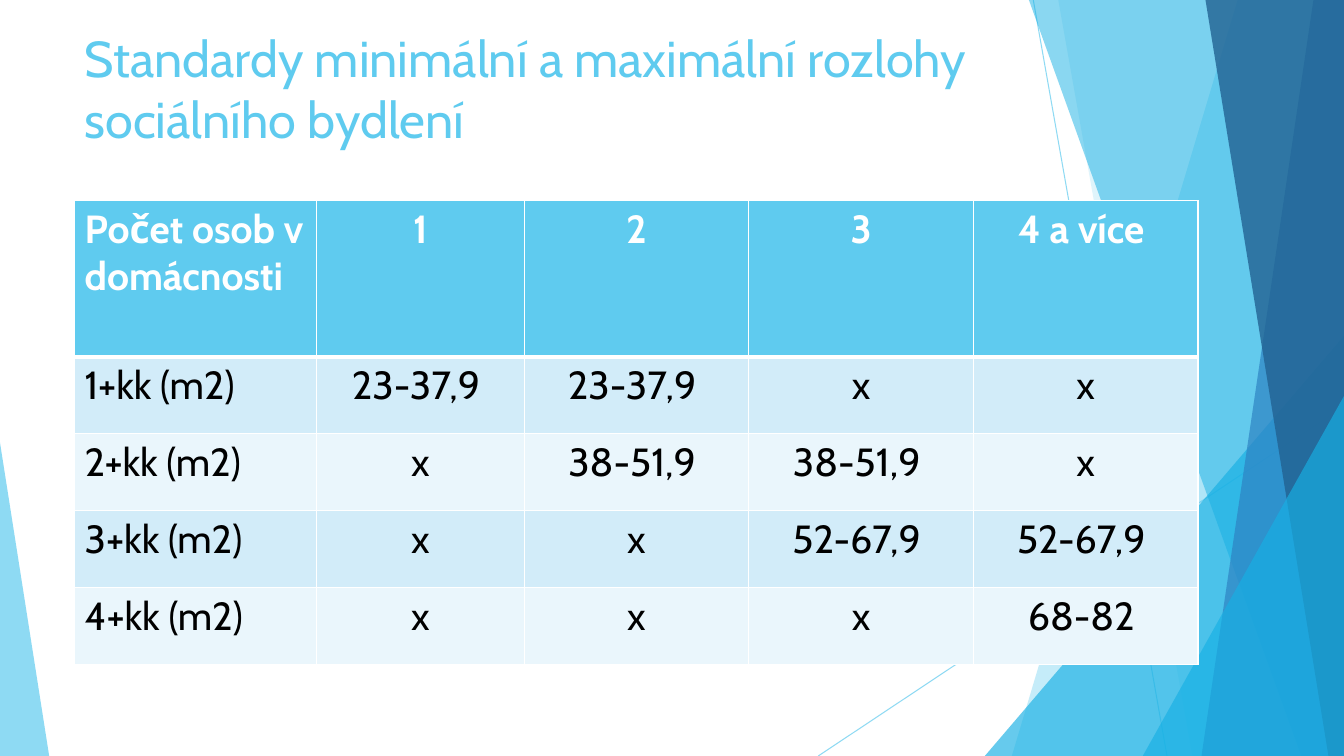
import pptx
import pptx.dml.color
import pptx.enum.shapes
import pptx.enum.text
import pptx.oxml
import pptx.oxml.ns
import pptx.util
import lxml.etree

Cm = pptx.util.Cm
Pt = pptx.util.Pt

# Content
TITLE = "Standardy minimální a maximální rozlohy sociálního bydlení"
ROWS = [
    ["Počet osob v domácnosti", "1", "2", "3", "4 a více "],
    ["1+kk (m2)", "23-37,9 ", "23-37,9 ", "x", "x"],
    ["2+kk (m2)", "x", "38-51,9 ", "38-51,9 ", "x"],
    ["3+kk (m2)", "x", "x", "52-67,9 ", "52-67,9 "],
    ["4+kk (m2)", "x", "x", "x", "68-82 "],
]

# Look, lengths in centimetres
FONT = "Cabin"
COLORS = {
    "sky": "5FCBEF", "cyan": "17B0E4", "blue": "2E83C3", "navy": "226292",
    "white": "FFFFFF", "black": "000000", "band_dark": "D2ECF9", "band_light": "EAF6FC",
}
SLIDE_WIDTH, SLIDE_HEIGHT = 33.87, 19.05
TITLE_BOX = (1.88, 0.56, 23.88, 3.76)
TABLE_LEFT, TABLE_TOP = 1.88, 5.05
COLUMN_WIDTHS = [6.1, 5.23] + [5.66] * 3
ROW_HEIGHTS = [3.94] + [1.94] * 4
THIN_BORDER, HEADER_BORDER = 1, 3

# Thin rays: start x, start y, end x, end y
RAYS = [(26.04, 0, 29.41, SLIDE_HEIGHT), (SLIDE_WIDTH, 10.24, 20.62, SLIDE_HEIGHT)]
# Facets, back to front. A band reaches the right edge: top x, bottom x.
# A triangle stands on the bottom edge: left, top, width, apex position.
FACETS = [
    ("band", (31.19, 25.5), "sky", 36),
    ("band", (26.67, 30.05), "sky", 20),
    ("triangle", (24.82, 8.46, 9.05, 1), "cyan", 66),
    ("band", (25.93, 32.79), "cyan", 50),
    ("band", (33.1, 30.28), "blue", 70),
    ("band", (30.38, 33.48), "navy", 80),
    ("triangle", (28.8, 9.98, 5.07, 1), "cyan", 66),
    ("triangle", (0, 11.15, 1.24, 0), "sky", 70),
]


def rgb(name):
    return pptx.dml.color.RGBColor.from_string(COLORS[name])


def set_alpha(shape, percent):
    color = shape._element.spPr.find(".//" + pptx.oxml.ns.qn("a:srgbClr"))
    alpha = lxml.etree.SubElement(color, pptx.oxml.ns.qn("a:alpha"))
    alpha.set("val", str(percent * 1000))


def write_text(text_frame, text, size, color, bold=False, align="LEFT"):
    text_frame.word_wrap = True
    paragraph = text_frame.paragraphs[0]
    paragraph.alignment = getattr(pptx.enum.text.PP_ALIGN, align)
    run = paragraph.add_run()
    run.text = text
    run.font.color.rgb = rgb(color)
    for name, value in {"name": FONT, "size": Pt(size), "bold": bold}.items():
        setattr(run.font, name, value)


def add_ray(slide, points):
    line = slide.shapes.add_connector(
        pptx.enum.shapes.MSO_CONNECTOR.STRAIGHT, *[Cm(value) for value in points])
    line.line.color.rgb = rgb("sky")
    line.line.width = Pt(0.75)
    set_alpha(line, 70)
    lxml.etree.SubElement(line._element.spPr, pptx.oxml.ns.qn("a:effectLst"))


def add_facet(slide, kind, geometry, color, opacity):
    if kind == "band":
        top_x, bottom_x = geometry
        builder = slide.shapes.build_freeform(Cm(top_x), 0)
        corners = [(SLIDE_WIDTH, 0), (SLIDE_WIDTH, SLIDE_HEIGHT), (bottom_x, SLIDE_HEIGHT)]
        builder.add_line_segments([(Cm(x), Cm(y)) for x, y in corners], close=True)
        shape = builder.convert_to_shape()
    else:
        left, top, width, apex = geometry
        shape = slide.shapes.add_shape(
            pptx.enum.shapes.MSO_SHAPE.ISOSCELES_TRIANGLE,
            Cm(left), Cm(top), Cm(width), Cm(SLIDE_HEIGHT - top))
        shape.adjustments[0] = apex
    shape.shadow.inherit = False
    shape.line.fill.background()
    shape.fill.solid()
    shape.fill.fore_color.rgb = rgb(color)
    set_alpha(shape, opacity)


def set_borders(cell, widths):
    properties = cell._tc.get_or_add_tcPr()
    for index, (side, width) in enumerate(widths.items()):
        properties.insert(index, pptx.oxml.parse_xml(
            f'<a:ln{side} {pptx.oxml.ns.nsdecls("a")} w="{Pt(width)}"><a:solidFill>'
            f'<a:srgbClr val="{COLORS["white"]}"/></a:solidFill></a:ln{side}>'))


def add_table(slide):
    table = slide.shapes.add_table(
        len(ROWS), len(COLUMN_WIDTHS), Cm(TABLE_LEFT), Cm(TABLE_TOP),
        Cm(sum(COLUMN_WIDTHS)), Cm(sum(ROW_HEIGHTS))).table
    for column, width in zip(table.columns, COLUMN_WIDTHS):
        column.width = Cm(width)
    for row, height in zip(table.rows, ROW_HEIGHTS):
        row.height = Cm(height)
    for row_index, texts in enumerate(ROWS):
        header = row_index == 0
        fill = "sky" if header else ("band_dark" if row_index % 2 else "band_light")
        borders = {
            "L": THIN_BORDER, "R": THIN_BORDER,
            "T": HEADER_BORDER if row_index == 1 else THIN_BORDER,
            "B": HEADER_BORDER if header else THIN_BORDER,
        }
        for column_index, text in enumerate(texts):
            cell = table.cell(row_index, column_index)
            cell.fill.solid()
            cell.fill.fore_color.rgb = rgb(fill)
            set_borders(cell, borders)
            write_text(cell.text_frame, text, 28, "white" if header else "black",
                       header, "CENTER" if column_index else "LEFT")


def main():
    presentation = pptx.Presentation()
    presentation.slide_width = Cm(SLIDE_WIDTH)
    presentation.slide_height = Cm(SLIDE_HEIGHT)
    slide = presentation.slides.add_slide(presentation.slide_layouts[6])

    # Background decoration
    for points in RAYS:
        add_ray(slide, points)
    for facet in FACETS:
        add_facet(slide, *facet)

    # Title and table
    title = slide.shapes.add_textbox(*[Cm(value) for value in TITLE_BOX])
    write_text(title.text_frame, TITLE, 36, "sky")
    add_table(slide)

    presentation.save("out.pptx")


if __name__ == "__main__":
    main()
